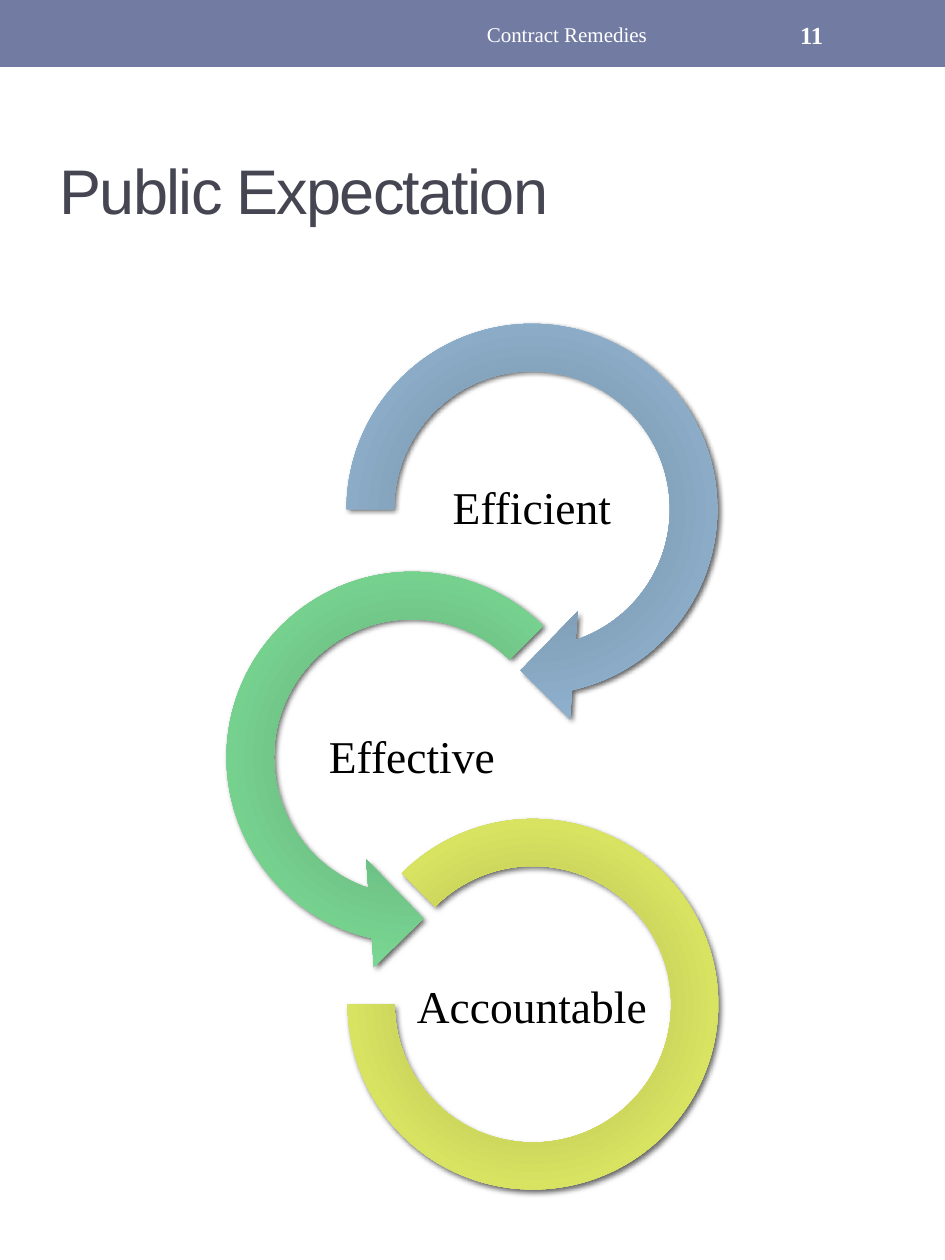
from dataclasses import dataclass

from lxml import etree
from pptx import Presentation
from pptx.dml.color import RGBColor
from pptx.enum.shapes import MSO_SHAPE
from pptx.enum.text import MSO_ANCHOR, MSO_AUTO_SIZE, PP_ALIGN
from pptx.oxml.ns import qn
from pptx.util import Cm, Pt

RECT = MSO_SHAPE.RECTANGLE
ARROW = MSO_SHAPE.CIRCULAR_ARROW
LEFT_ARROW = MSO_SHAPE.LEFT_CIRCULAR_ARROW
ARC = MSO_SHAPE.BLOCK_ARC
LEFT, CENTER = PP_ALIGN.LEFT, PP_ALIGN.CENTER
MIDDLE = MSO_ANCHOR.MIDDLE
NO_AUTOFIT = MSO_AUTO_SIZE.NONE

SERIF, SANS = "Times New Roman", "Arial"
COLORS = {"band": "727CA3", "title": "464653", "text": "000000",
          "white": "FFFFFF", "shadow": "000000"}
GRADIENTS = {
    "blue": ("7E9EB9", "809EB7", "8FB1CD", "9FB8CD"),
    "green": ("6AC382", "6DC084", "7AD793", "8DD3A0"),
    "lime": ("C5CF54", "C2CB58", "D8E362", "D2DA7A"),
}
STOPS = (0, 34, 70, 100)
LABEL_W, LABEL_H = 4.83, 2.41


@dataclass
class Ring:
    label: str
    kind: int
    left: float
    top: float
    size: float
    adjustments: tuple
    gradient: str
    label_left: float
    label_top: float


RINGS = [
    Ring("Efficient", ARROW, 6.38, 5.92, 8.69,
         (0.11, 11.423, 45, 108, 0.125), "blue", 8.31, 9.07),
    Ring("Effective", LEFT_ARROW, 3.96, 10.92, 8.69,
         (0.11, 11.423, 63, 189, 0.125), "green", 5.89, 14.1),
    Ring("Accountable", ARC, 7.01, 16.51, 7.47,
         (135, 108, 0.127), "lime", 8.31, 19.13),
]


def place(sp, left: float, top: float, width: float, height: float) -> None:
    sp.left, sp.top, sp.width, sp.height = map(Cm, (left, top, width, height))


def write(sp, text: str, *, size: float, color: str, font: str = SERIF,
          align=CENTER, bold: bool = False, line_spacing: float = 1.0,
          spacing: float = 0, inset: float | None = None) -> None:
    tf = sp.text_frame
    tf.word_wrap = True
    tf.auto_size = NO_AUTOFIT
    tf.vertical_anchor = MIDDLE
    if inset is not None:
        tf.margin_left = tf.margin_right = Cm(inset)
        tf.margin_top = tf.margin_bottom = Cm(inset)
    p = tf.paragraphs[0]
    p.alignment = align
    p.line_spacing = line_spacing
    r = p.add_run()
    r.text = text
    r.font.name = font
    r.font.size = Pt(size)
    r.font.bold = bold
    r.font.color.rgb = RGBColor.from_string(COLORS[color])
    if spacing:
        r.font._element.set("spc", str(int(spacing * 100)))


def add_text(s, text: str, box: tuple, **fmt) -> None:
    write(s.shapes.add_textbox(*map(Cm, box)), text, **fmt)


def add_color(parent, hex_color: str):
    return etree.SubElement(parent, qn("a:srgbClr"), val=hex_color)


def fill_radial(sp, colors: tuple) -> None:
    sp.fill.gradient()
    grad = sp._element.spPr.find(qn("a:gradFill"))
    for child in list(grad):
        grad.remove(child)
    stops = etree.SubElement(grad, qn("a:gsLst"))
    for pos, color in zip(STOPS, colors):
        add_color(etree.SubElement(stops, qn("a:gs"), pos=str(pos * 1000)), color)
    path = etree.SubElement(grad, qn("a:path"))
    path.set("path", "circle")
    etree.SubElement(path, qn("a:fillToRect"), {side: "100000" for side in "ltrb"})


def add_shadow(sp) -> None:
    sp.shadow.inherit = False
    effects = sp._element.spPr.find(qn("a:effectLst"))
    shadow = etree.SubElement(
        effects, qn("a:outerShdw"), blurRad=str(Pt(3)), dist=str(Pt(2)),
        dir=str(45 * 60000), rotWithShape="0")
    color = add_color(shadow, COLORS["shadow"])
    etree.SubElement(color, qn("a:alpha"), val="60000")


def add_ring(s, ring: Ring) -> None:
    sp = s.shapes.add_shape(
        ring.kind, *map(Cm, (ring.left, ring.top, ring.size, ring.size)))
    for i, value in enumerate(ring.adjustments):
        sp.adjustments[i] = value
    sp.line.fill.background()
    fill_radial(sp, GRADIENTS[ring.gradient])
    add_shadow(sp)
    add_text(s, ring.label, (ring.label_left, ring.label_top, LABEL_W, LABEL_H),
             size=26, color="text", line_spacing=0.9, inset=0.05)


def main() -> None:
    prs = Presentation()
    prs.slide_width, prs.slide_height = Cm(19.05), Cm(25.4)
    s = prs.slides.add_slide(prs.slide_layouts[5])

    # Header band
    band = s.shapes.add_shape(RECT, 0, 0, prs.slide_width, Cm(1.35))
    band.shadow.inherit = False
    band.fill.solid()
    band.fill.fore_color.rgb = RGBColor.from_string(COLORS["band"])
    band.line.fill.background()

    # Title
    title = s.shapes.title
    place(title, 0.95, 1.98, 17.15, 3.66)
    write(title, "Public Expectation", size=36, color="title", font=SANS,
          align=LEFT, spacing=-1)

    # Chain of rings
    for ring in RINGS:
        add_ring(s, ring)

    # Header text and page number
    add_text(s, "Contract Remedies", (7.14, 0.08, 8.58, 1.22),
             size=12, color="white")
    add_text(s, "11", (15.88, 0.08, 2.23, 1.22),
             size=14, color="white", align=LEFT, bold=True)

    prs.save("out.pptx")


if __name__ == "__main__":
    main()
